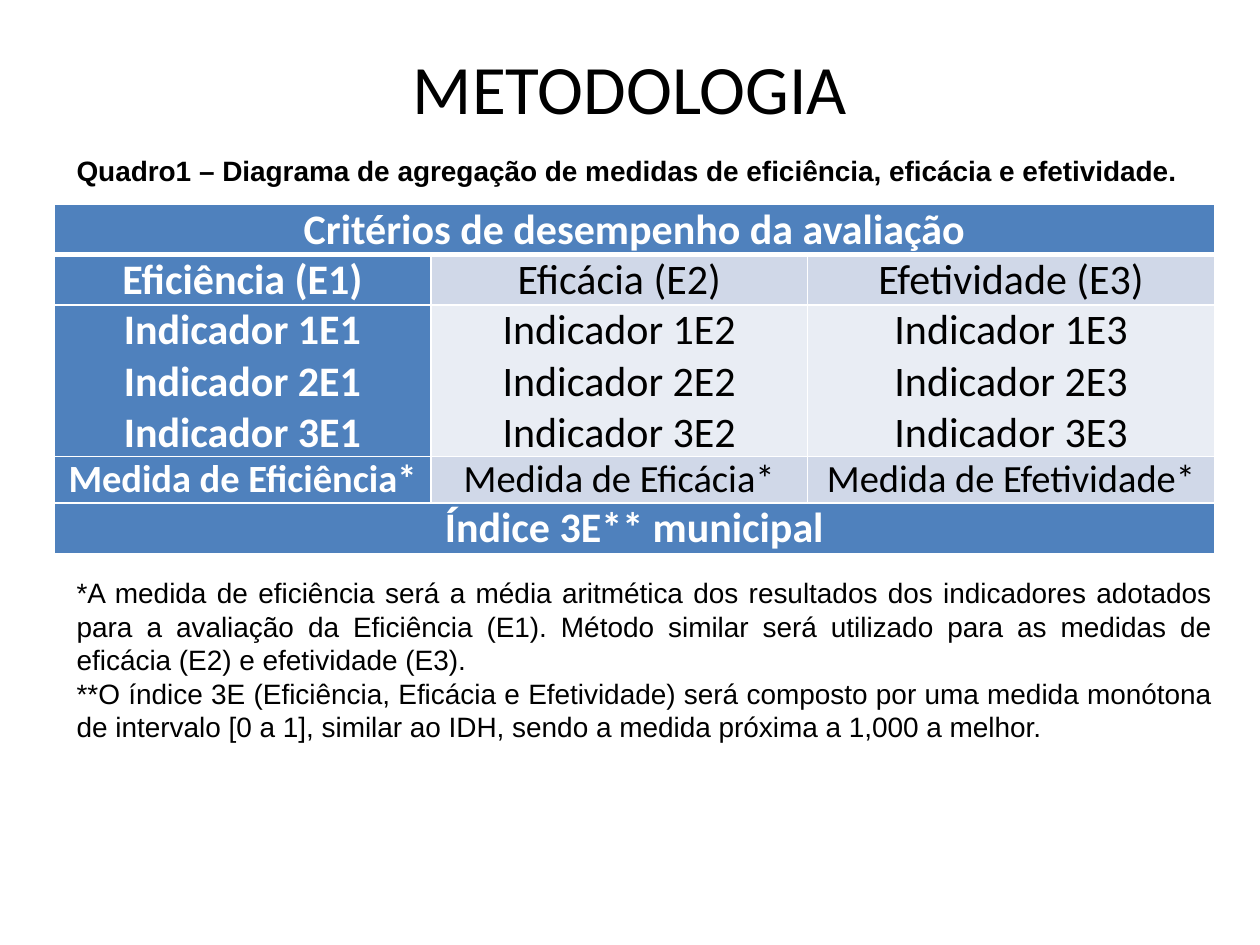
from lxml import etree
from pptx import Presentation
from pptx.dml.color import RGBColor
from pptx.enum.text import MSO_ANCHOR, PP_ALIGN
from pptx.oxml.ns import qn
from pptx.util import Inches, Pt

CENTER, JUSTIFY = PP_ALIGN.CENTER, PP_ALIGN.JUSTIFY
TOP, MIDDLE = MSO_ANCHOR.TOP, MSO_ANCHOR.MIDDLE
BLACK, WHITE, BLUE = "000000", "FFFFFF", "4F81BD"
LIGHT, PALE = "D0D8E8", "E9EDF4"

COLUMN_WIDTHS = [2.99, 2.99, 3.23]
ROW_HEIGHTS = [0.4, 0.4, 1.2, 0.37, 0.4]
ROW_SIZES = [24, 24, 24, 22, 24]
ROW_FILLS = [BLUE, LIGHT, PALE, LIGHT, BLUE]
CRITERIA = ["Eficiência", "Eficácia", "Efetividade"]
CAPTION = "Quadro1 – Diagrama de agregação de medidas de eficiência, eficácia e efetividade."
NOTES = (
    "*A medida de eficiência será a média aritmética dos resultados dos indicadores "
    "adotados para a avaliação da Eficiência (E1). Método similar será utilizado para "
    "as medidas de eficácia (E2) e efetividade (E3).\n"
    "**O índice 3E (Eficiência, Eficácia e Efetividade) será composto por uma medida "
    "monótona de intervalo [0 a 1], similar ao IDH, sendo a medida próxima a 1,000 a melhor."
)


def rgb(value):
    return RGBColor.from_string(value)


def write_text(frame, text, align, size, font, color=BLACK, bold=False):
    frame.text = text
    for paragraph in frame.paragraphs:
        paragraph.alignment = align
        for run in paragraph.runs:
            run.font.size = Pt(size)
            run.font.name = font
            run.font.bold = bold
            run.font.color.rgb = rgb(color)


def add_text(slide, position, text, align, size, font, anchor=TOP, bold=False):
    frame = slide.shapes.add_textbox(*map(Inches, position)).text_frame
    frame.word_wrap = True
    frame.vertical_anchor = anchor
    write_text(frame, text, align, size, font, bold=bold)


def set_borders(cell, widths):
    properties = cell._tc.get_or_add_tcPr()
    for index, (side, width) in enumerate(widths.items()):
        line = etree.Element(qn(f"a:ln{side}"), w=str(Pt(width)))
        fill = etree.SubElement(line, qn("a:solidFill"))
        etree.SubElement(fill, qn("a:srgbClr"), val=WHITE)
        properties.insert(index, line)


def criteria_rows():
    codes = [f"E{number}" for number in range(1, 4)]
    return [
        ["Critérios de desempenho da avaliação", "", ""],
        [f"{name} ({code})" for name, code in zip(CRITERIA, codes)],
        ["\n".join(f"Indicador {n}{code}" for n in range(1, 4)) for code in codes],
        [f"Medida de {name}*" for name in CRITERIA],
        ["Índice 3E** municipal", "", ""],
    ]


def add_criteria_table(slide):
    rows = criteria_rows()
    position = map(Inches, (0.43, 1.62, sum(COLUMN_WIDTHS), sum(ROW_HEIGHTS)))
    table = slide.shapes.add_table(len(rows), len(COLUMN_WIDTHS), *position).table
    for column, width in zip(table.columns, COLUMN_WIDTHS):
        column.width = Inches(width)
    for r, texts in enumerate(rows):
        table.rows[r].height = Inches(ROW_HEIGHTS[r])
        for c, text in enumerate(texts):
            cell = table.cell(r, c)
            fill = BLUE if c == 0 else ROW_FILLS[r]
            emphasized = fill == BLUE
            cell.fill.solid()
            cell.fill.fore_color.rgb = rgb(fill)
            cell.vertical_anchor = MIDDLE
            cell.margin_left = cell.margin_right = Inches(0.07)
            cell.margin_top = cell.margin_bottom = 0
            write_text(cell.text_frame, text, CENTER, ROW_SIZES[r], "Calibri",
                       WHITE if emphasized else BLACK, emphasized)
            set_borders(cell, {"L": 1, "R": 1, "T": 3 if r == 1 else 1, "B": 3 if r == 0 else 1})
    for r in (0, len(rows) - 1):
        table.cell(r, 0).merge(table.cell(r, len(COLUMN_WIDTHS) - 1))


def main():
    presentation = Presentation()
    presentation.slide_width, presentation.slide_height = Inches(10), Inches(7.5)
    slide = presentation.slides.add_slide(presentation.slide_layouts[6])
    add_text(slide, (0.5, 0.29, 9, 0.79), "METODOLOGIA", CENTER, 39.6, "Calibri", MIDDLE)
    add_criteria_table(slide)
    add_text(slide, (0.51, 4.51, 9.21, 1.45), NOTES, JUSTIFY, 16, "Arial", MIDDLE)
    add_text(slide, (0.51, 1.17, 9.06, 0.37), CAPTION, JUSTIFY, 16, "Arial", bold=True)
    presentation.save("out.pptx")


if __name__ == "__main__":
    main()
